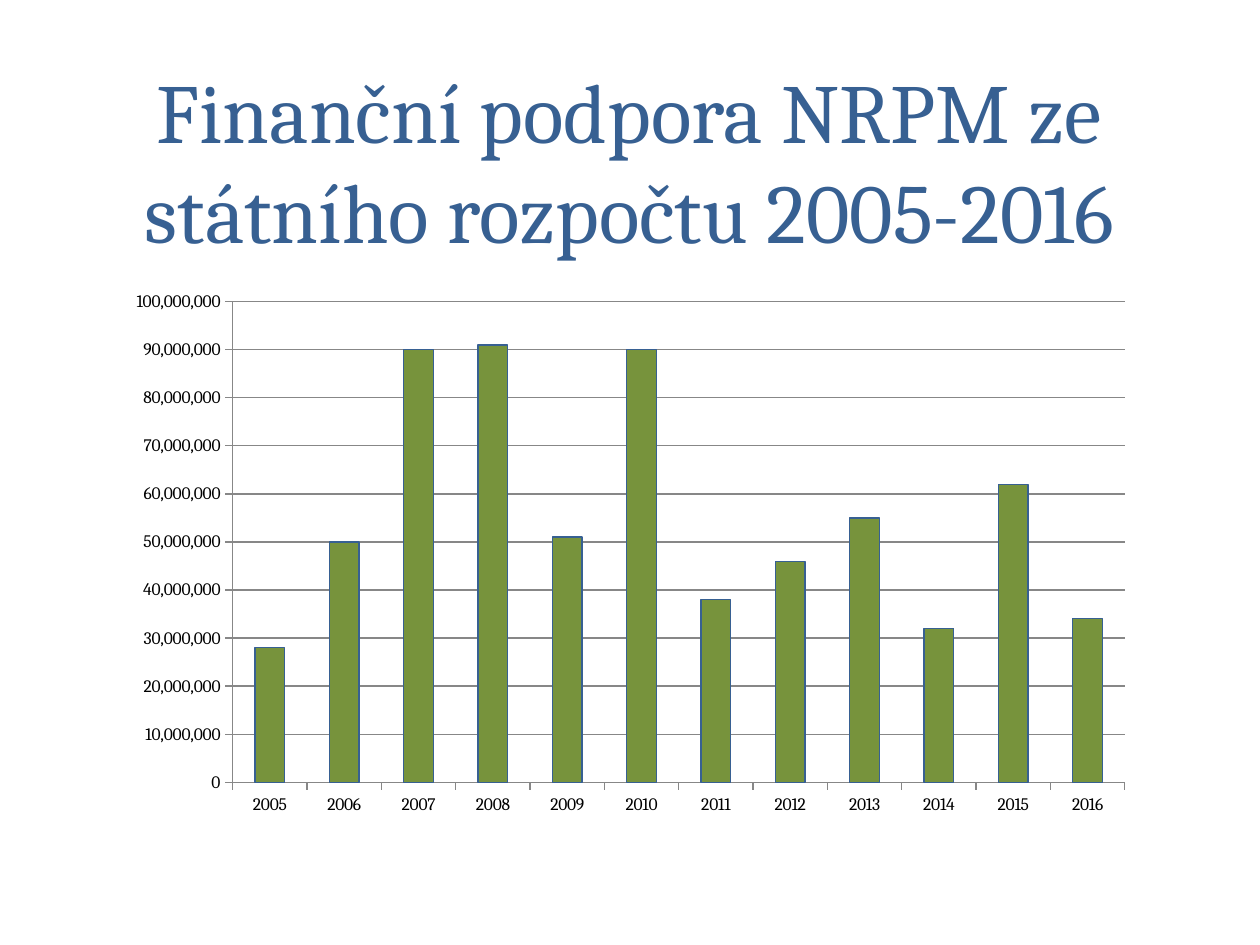
from dataclasses import dataclass

from pptx import Presentation
from pptx.chart.data import CategoryChartData
from pptx.dml.color import RGBColor
from pptx.enum.chart import XL_CHART_TYPE, XL_TICK_MARK
from pptx.enum.text import MSO_ANCHOR, MSO_AUTO_SIZE, PP_ALIGN
from pptx.util import Inches, Pt

COLUMNS = XL_CHART_TYPE.COLUMN_CLUSTERED
TICK_OUTSIDE = XL_TICK_MARK.OUTSIDE
TICK_NONE = XL_TICK_MARK.NONE
MIDDLE = MSO_ANCHOR.MIDDLE
CENTER = PP_ALIGN.CENTER
NO_AUTOFIT = MSO_AUTO_SIZE.NONE


@dataclass(frozen=True)
class Theme:
    """Fonts, colours and type sizes of the slide."""
    font: str = "Cambria"
    blue: RGBColor = RGBColor(0x37, 0x60, 0x92)
    green: RGBColor = RGBColor(0x77, 0x93, 0x3C)
    black: RGBColor = RGBColor(0, 0, 0)
    gray: RGBColor = RGBColor(0x87, 0x87, 0x87)
    title_size: Pt = Pt(48)
    chart_size: Pt = Pt(10)
    line_width: Pt = Pt(0.75)


THEME = Theme()
TITLE = "Finanční podpora NRPM ze státního rozpočtu 2005-2016"
TITLE_BOX = (Inches(0.6), Inches(0.48), Inches(8.79), Inches(1.58))
CHART_BOX = (Inches(0.92), Inches(2.23), Inches(8.17), Inches(4.32))
FIRST_YEAR = 2005
MILLION = 1_000_000
SUPPORT_MILLIONS = (28, 50, 90, 91, 51, 90, 38, 46, 55, 32, 62, 34)


def add_title(slide, box):
    """Place and format the title placeholder in the box."""
    title = slide.shapes.title
    title.left, title.top, title.width, title.height = box
    frame = title.text_frame
    frame.word_wrap = True
    frame.auto_size = NO_AUTOFIT
    frame.vertical_anchor = MIDDLE
    paragraph = frame.paragraphs[0]
    paragraph.alignment = CENTER
    run = paragraph.add_run()
    run.text = TITLE
    run.font.name = THEME.font
    run.font.size = THEME.title_size
    run.font.color.rgb = THEME.blue


def format_line(line, color):
    """Give a chart line its colour and width."""
    line.color.rgb = color
    line.width = THEME.line_width


def format_axes(chart):
    """Set ticks, scale, number format and gridlines."""
    for axis in (chart.category_axis, chart.value_axis):
        axis.major_tick_mark = TICK_OUTSIDE
        axis.minor_tick_mark = TICK_NONE
        format_line(axis.format.line, THEME.gray)
    chart.category_axis.has_major_gridlines = False
    values = chart.value_axis
    values.minimum_scale = 0
    values.maximum_scale = 100 * MILLION
    values.major_unit = 10 * MILLION
    values.has_major_gridlines = True
    format_line(values.major_gridlines.format.line, THEME.gray)
    values.tick_labels.number_format = "#,##0"
    values.tick_labels.number_format_is_linked = False


def add_support_chart(slide, box):
    """Draw the yearly support as columns in the box."""
    data = CategoryChartData(number_format="#,##0")
    data.categories = [str(FIRST_YEAR + index) for index in range(len(SUPPORT_MILLIONS))]
    data.add_series("Series 1", [value * MILLION for value in SUPPORT_MILLIONS])
    chart = slide.shapes.add_chart(COLUMNS, *box, data).chart
    chart.has_legend = False
    chart.has_title = False
    chart.font.name = THEME.font
    chart.font.size = THEME.chart_size
    chart.font.color.rgb = THEME.black
    format_axes(chart)
    plot = chart.plots[0]
    plot.gap_width = 150
    plot.vary_by_categories = False
    series = plot.series[0]
    series.invert_if_negative = False
    series.format.fill.solid()
    series.format.fill.fore_color.rgb = THEME.green
    format_line(series.format.line, THEME.blue)


def main():
    """Build and save the presentation."""
    presentation = Presentation()
    presentation.slide_width = Inches(10)
    presentation.slide_height = Inches(7.5)
    slide = presentation.slides.add_slide(presentation.slide_layouts[5])
    add_title(slide, TITLE_BOX)
    add_support_chart(slide, CHART_BOX)
    presentation.save("out.pptx")


if __name__ == "__main__":
    main()
